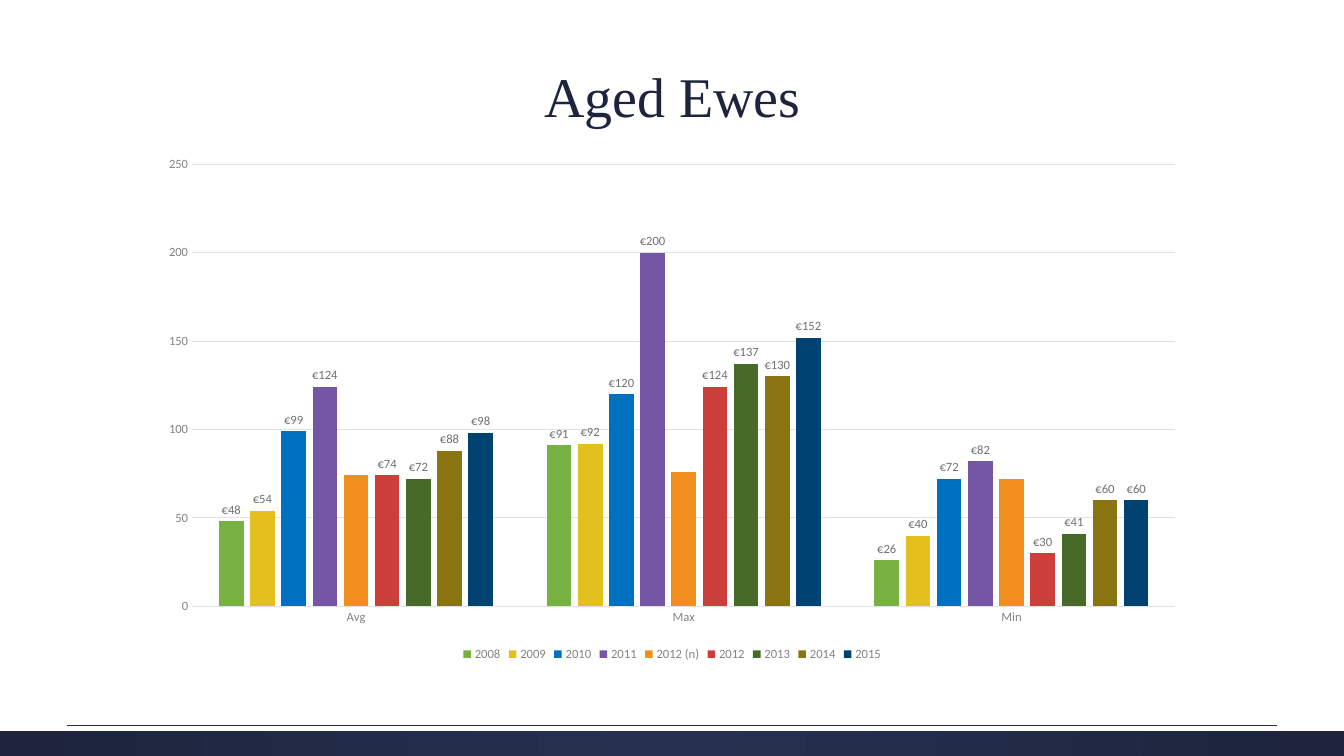
"""Builds the slide with yearly aged ewe prices as a clustered column chart."""
from lxml import etree
from pptx import Presentation
from pptx import util as u
from pptx.chart.data import CategoryChartData
from pptx.dml.color import RGBColor
from pptx.enum import chart as charts, shapes, text
from pptx.oxml.ns import qn

TITLE = "Aged Ewes"
CATEGORIES = ["Avg", "Max", "Min"]
PRICES = [
    ("2008", (48, 91, 26), "77B142"),
    ("2009", (54, 92, 40), "E3C01E"),
    ("2010", (99, 120, 72), "0070C0"),
    ("2011", (124, 200, 82), "7556A4"),
    ("2012 (n)", (74, 76, 72), "F08F1E"),
    ("2012", (74, 124, 30), "CB3E3A"),
    ("2013", (72, 137, 41), "476A28"),
    ("2014", (88, 130, 60), "897411"),
    ("2015", (98, 152, 60), "004373"),
]
UNLABELLED = {"2012 (n)"}
EURO = '"€"#,##0'
NAVY, NAVY_LIGHT, WHITE = "1D243C", "263050", "FFFFFF"
AXIS_GREY, LABEL_GREY, GRID_GREY = "838383", "707070", "E2E2E2"

WIDTH, HEIGHT = 33.87, 19.05
CONTENT_LEFT, CONTENT_WIDTH = 3.73, 26.42
TITLE_TOP, TITLE_HEIGHT, CHART_HEIGHT = 1.3, 2.39, 13.08
BAND_HEIGHT, STRIP_HEIGHT, RULE_MARGIN = 0.76, 0.13, 1.7


def paint(color_format, color):
    color_format.rgb = RGBColor.from_string(color)


def style_font(font, size=9, color=AXIS_GREY, name="Calibri"):
    font.size, font.name, font.bold = u.Pt(size), name, False
    paint(font.color, color)


def style_line(line, color=GRID_GREY, width=0.75):
    line.width = u.Pt(width)
    paint(line.color, color)


def add_text(slide, words, box, **font_format):
    frame = slide.shapes.add_textbox(*map(u.Cm, box)).text_frame
    frame.word_wrap = True
    frame.vertical_anchor = text.MSO_ANCHOR.MIDDLE
    paragraph = frame.paragraphs[0]
    paragraph.alignment = text.PP_ALIGN.CENTER
    paragraph.line_spacing = 0.9
    run = paragraph.add_run()
    run.text = words
    style_font(run.font, **font_format)


def add_bar(slide, top, height):
    shape = slide.shapes.add_shape(
        shapes.MSO_SHAPE.RECTANGLE, 0, u.Cm(top), u.Cm(WIDTH), u.Cm(height))
    shape.shadow.inherit = False
    shape.line.fill.background()
    return shape


def add_footer(slide):
    top = HEIGHT - BAND_HEIGHT
    band = add_bar(slide, top, BAND_HEIGHT)
    band.fill.gradient()
    for stop, color, position in zip(band.fill.gradient_stops, (NAVY_LIGHT, NAVY), (0, 1)):
        paint(stop.color, color)
        stop.position = position
    gradient = band.element.spPr.find(qn("a:gradFill"))
    linear = gradient.find(qn("a:lin"))
    circle = etree.Element(qn("a:path"), {"path": "circle"})
    etree.SubElement(circle, qn("a:fillToRect"), dict.fromkeys("ltrb", "50000"))
    gradient.replace(linear, circle)

    strip = add_bar(slide, top, STRIP_HEIGHT)
    strip.fill.solid()
    paint(strip.fill.fore_color, WHITE)

    rule_top = u.Cm(top - 0.02)
    rule = slide.shapes.add_connector(
        shapes.MSO_CONNECTOR.STRAIGHT, u.Cm(RULE_MARGIN), rule_top,
        u.Cm(WIDTH - RULE_MARGIN), rule_top)
    style_line(rule.line, NAVY_LIGHT)
    etree.SubElement(rule.element.spPr, qn("a:effectLst"))


def add_price_chart(slide):
    data = CategoryChartData(number_format=EURO)
    data.categories = CATEGORIES
    for year, values, _ in PRICES:
        data.add_series(year, values)
    box = (CONTENT_LEFT, TITLE_TOP + TITLE_HEIGHT, CONTENT_WIDTH, CHART_HEIGHT)
    chart = slide.shapes.add_chart(
        charts.XL_CHART_TYPE.COLUMN_CLUSTERED, *map(u.Cm, box), data).chart
    style_font(chart.font, size=10, color="404040")
    chart.has_title = False
    chart.has_legend = True
    chart.legend.position = charts.XL_LEGEND_POSITION.BOTTOM
    chart.legend.include_in_layout = False
    style_font(chart.legend.font)

    for axis in (chart.category_axis, chart.value_axis):
        axis.major_tick_mark = axis.minor_tick_mark = charts.XL_TICK_MARK.NONE
        style_font(axis.tick_labels.font)
    style_line(chart.category_axis.format.line)
    values_axis = chart.value_axis
    values_axis.minimum_scale, values_axis.maximum_scale, values_axis.major_unit = 0, 250, 50
    values_axis.tick_labels.number_format = "General"
    values_axis.tick_labels.number_format_is_linked = False
    values_axis.format.line.fill.background()
    style_line(values_axis.major_gridlines.format.line)

    plot = chart.plots[0]
    plot.gap_width, plot.overlap, plot.vary_by_categories = 219, -27, False
    for series, (year, _, color) in zip(plot.series, PRICES):
        series.format.fill.solid()
        paint(series.format.fill.fore_color, color)
        if year not in UNLABELLED:
            labels = series.data_labels
            labels.show_value = True
            labels.number_format, labels.number_format_is_linked = EURO, False
            labels.position = charts.XL_LABEL_POSITION.OUTSIDE_END
            style_font(labels.font, color=LABEL_GREY)


def main():
    presentation = Presentation()
    presentation.slide_width, presentation.slide_height = u.Cm(WIDTH), u.Cm(HEIGHT)
    slide = presentation.slides.add_slide(presentation.slide_layouts[6])
    add_footer(slide)
    add_text(slide, TITLE, (CONTENT_LEFT, TITLE_TOP, CONTENT_WIDTH, TITLE_HEIGHT),
             size=40, color=NAVY, name="Times New Roman")
    add_price_chart(slide)
    presentation.save("out.pptx")


if __name__ == "__main__":
    main()
